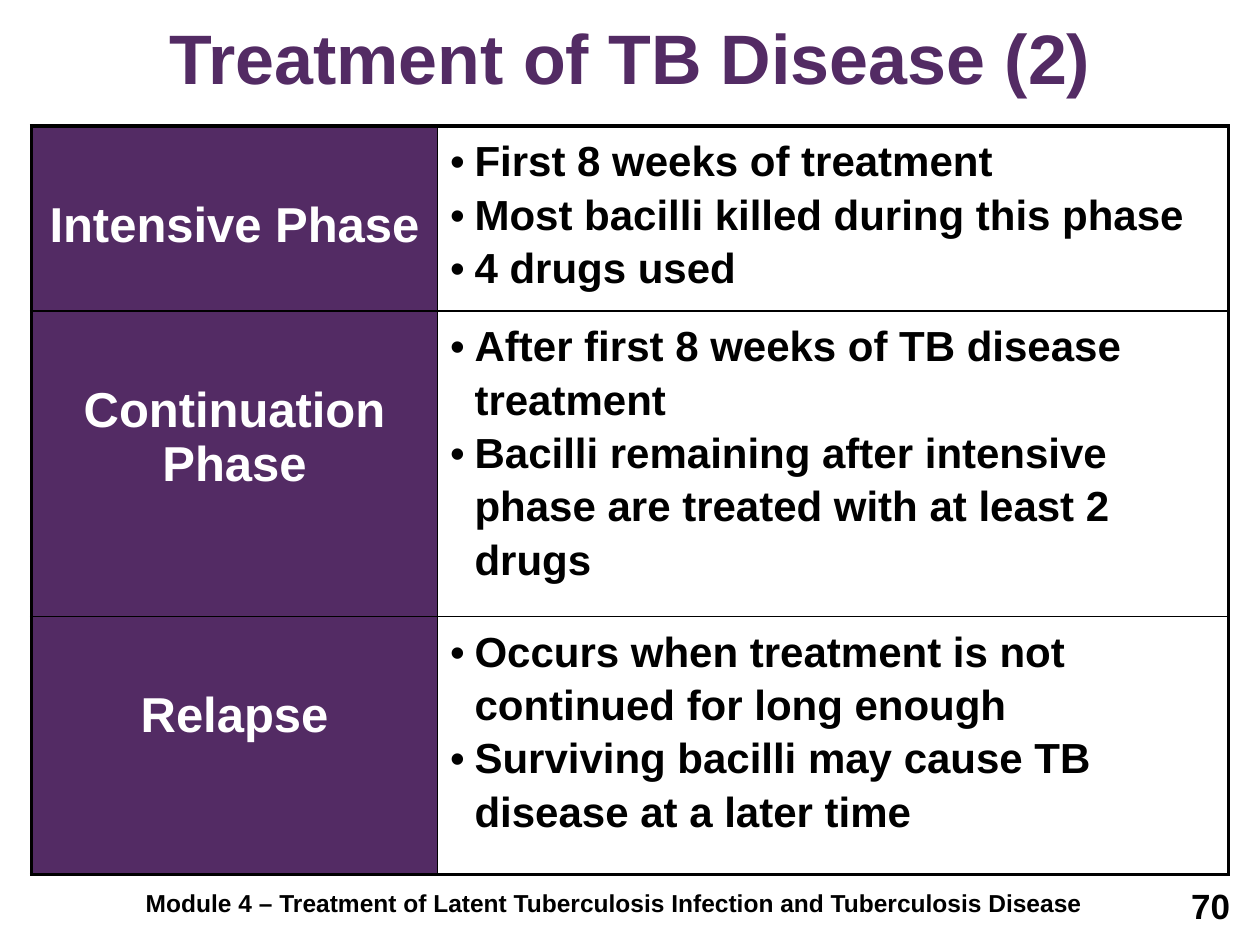
"""Build the slide on the phases of TB disease treatment."""
from lxml.etree import SubElement
from pptx import Presentation
from pptx.dml.color import RGBColor
from pptx.enum.text import MSO_ANCHOR, PP_ALIGN
from pptx.oxml.ns import qn
from pptx.util import Pt

PURPLE, BLACK, WHITE = "532B64", "000000", "FFFFFF"
TITLE = "Treatment of TB Disease (2)"
FOOTER = "Module 4 – Treatment of Latent Tuberculosis Infection and Tuberculosis Disease"
PAGE_NUMBER = "70"
PHASES = [
    ("Intensive Phase", 105, [
        "First 8 weeks of treatment",
        "Most bacilli killed during this phase",
        "4 drugs used",
    ]),
    ("Continuation Phase", 174.5, [
        "After first 8 weeks of TB disease treatment",
        "Bacilli remaining after intensive phase are treated with at least 2 drugs",
    ]),
    ("Relapse", 147.5, [
        "Occurs when treatment is not continued for long enough",
        "Surviving bacilli may cause TB disease at a later time",
    ]),
]
COLUMN_WIDTHS = [232, 452]
TABLE_LEFT, TABLE_TOP = 18, 72
INNER_LINE, OUTER_LINE = 1, 2.25
LABEL_MARGIN_TOP = 41
BULLET_INDENT = 14
TEXT_BOXES = [
    (TITLE, (0, 0, 720, 65), 40, PURPLE, PP_ALIGN.CENTER, MSO_ANCHOR.MIDDLE),
    (FOOTER, (0, 504, 702, 24), 14, BLACK, PP_ALIGN.CENTER, MSO_ANCHOR.MIDDLE),
    (PAGE_NUMBER, (542, 502, 168, 37), 20, BLACK, PP_ALIGN.RIGHT, MSO_ANCHOR.TOP),
]


def color(value):
    return RGBColor.from_string(value)


def write(para, text, size, fill, align):
    para.alignment = align
    span = para.add_run()
    span.text = text
    for name, value in {"name": "Arial", "size": Pt(size), "bold": True}.items():
        setattr(span.font, name, value)
    span.font.color.rgb = color(fill)


def add_bullet(para):
    properties = para._p.get_or_add_pPr()
    properties.set("marL", str(Pt(BULLET_INDENT)))
    properties.set("indent", str(-Pt(BULLET_INDENT)))
    SubElement(properties, qn("a:buFont"), typeface="Arial")
    SubElement(properties, qn("a:buChar"), char="•")


def paint_cell(cell, fill, widths):
    properties = cell._tc.get_or_add_tcPr()
    for side, width in widths.items():
        line = SubElement(properties, qn(f"a:ln{side}"), w=str(Pt(width)))
        solid = SubElement(line, qn("a:solidFill"))
        SubElement(solid, qn("a:srgbClr"), val=BLACK)
    cell.fill.solid()
    cell.fill.fore_color.rgb = color(fill)


def add_text_box(page, text, place, size, fill, align, anchor):
    box = page.shapes.add_textbox(*map(Pt, place))
    frame = box.text_frame
    frame.word_wrap = True
    frame.vertical_anchor = anchor
    write(frame.paragraphs[0], text, size, fill, align)


def add_phase_table(page):
    heights = [height for _, height, _ in PHASES]
    place = (TABLE_LEFT, TABLE_TOP, sum(COLUMN_WIDTHS), sum(heights))
    table = page.shapes.add_table(len(PHASES), 2, *map(Pt, place)).table
    table.first_row = table.horz_banding = False
    for column, width in zip(table.columns, COLUMN_WIDTHS):
        column.width = Pt(width)
    for index, (label, height, points) in enumerate(PHASES):
        table.rows[index].height = Pt(height)
        top = OUTER_LINE if index == 0 else INNER_LINE
        bottom = OUTER_LINE if index == len(PHASES) - 1 else INNER_LINE
        label_cell, points_cell = table.rows[index].cells
        paint_cell(label_cell, PURPLE,
                   {"L": OUTER_LINE, "R": INNER_LINE, "T": top, "B": bottom})
        paint_cell(points_cell, WHITE,
                   {"L": INNER_LINE, "R": OUTER_LINE, "T": top, "B": bottom})
        label_cell.margin_top = Pt(LABEL_MARGIN_TOP)
        write(label_cell.text_frame.paragraphs[0], label, 28, WHITE, PP_ALIGN.CENTER)
        frame = points_cell.text_frame
        for number, point in enumerate(points):
            para = frame.add_paragraph() if number else frame.paragraphs[0]
            para.line_spacing = 1.14
            write(para, point, 24, BLACK, PP_ALIGN.LEFT)
            add_bullet(para)


def main():
    deck = Presentation()
    deck.slide_width, deck.slide_height = Pt(720), Pt(540)
    page = deck.slides.add_slide(deck.slide_layouts[6])
    for entry in TEXT_BOXES:
        add_text_box(page, *entry)
    add_phase_table(page)
    deck.save("out.pptx")


if __name__ == "__main__":
    main()
